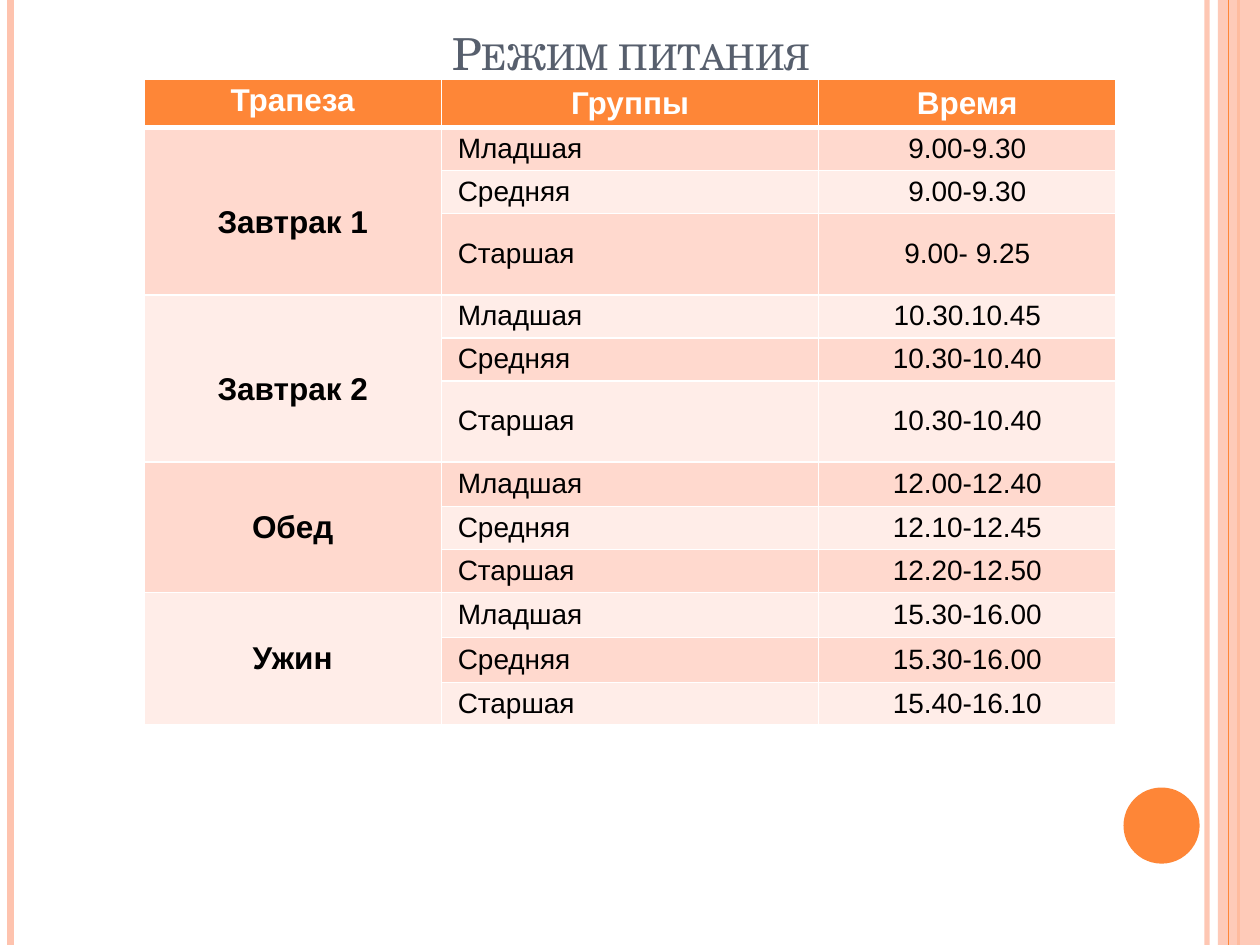
from dataclasses import dataclass

from lxml.etree import SubElement
from pptx import Presentation
from pptx.dml.color import RGBColor
from pptx.enum.shapes import MSO_CONNECTOR, MSO_SHAPE
from pptx.enum.text import MSO_ANCHOR, PP_ALIGN
from pptx.oxml import parse_xml
from pptx.oxml.ns import nsdecls, qn
from pptx.util import Pt

ORANGE = "FE8637"
PEACH = "FEC3AE"
BANDS = ("FFD9CE", "FFEDE8")
WHITE = "FFFFFF"
BLACK = "000000"
SLIDE_HEIGHT = 540
GROUPS = ("Младшая", "Средняя", "Старшая")
HEADERS = ("Трапеза", "Группы", "Время")
COLUMN_WIDTHS = (170, 215.5, 170)
HEADER_HEIGHT = 28


@dataclass(frozen=True)
class Stripe:
    x: float
    color: str
    width: float
    opacity: int = 100


@dataclass(frozen=True)
class Meal:
    name: str
    times: tuple[str, str, str]
    heights: tuple[float, float, float]
    top_margin: float = 2.5


BACK_STRIPES = (
    Stripe(689.75, PEACH, 3, 93),
    Stripe(6, PEACH, 4.5),
    Stripe(707.75, ORANGE, 1.5),
)
FRONT_STRIPE = Stripe(702, ORANGE, 0.75)
MEALS = (
    Meal("Завтрак 1", ("9.00-9.30", "9.00-9.30", "9.00- 9.25"), (24.6, 24.6, 46.3), 15),
    Meal("Завтрак 2", ("10.30.10.45", "10.30-10.40", "10.30-10.40"), (24.6, 24.6, 46.3), 15),
    Meal("Обед", ("12.00-12.40", "12.10-12.45", "12.20-12.50"), (25.7, 24.6, 24.6)),
    Meal("Ужин", ("15.30-16.00", "15.30-16.00", "15.40-16.10"), (25.7, 25.7, 23.4)),
)


def paint(target, color: str, opacity: int = 100) -> None:
    target.solid()
    target.fore_color.rgb = RGBColor.from_string(color)
    if opacity < 100:
        color_element = target._xPr.find(qn("a:solidFill"))[0]
        SubElement(color_element, qn("a:alpha"), val=str(opacity * 1000))


def draw_stripe(slide, stripe: Stripe) -> None:
    connector = slide.shapes.add_connector(
        MSO_CONNECTOR.STRAIGHT, Pt(stripe.x), Pt(0), Pt(stripe.x), Pt(SLIDE_HEIGHT)
    )
    connector.line.width = Pt(stripe.width)
    paint(connector.line.fill, stripe.color, stripe.opacity)
    SubElement(connector._element.spPr, qn("a:effectLst"))


def draw_shape(slide, kind, left: float, top: float, width: float, height: float,
               color: str, opacity: int = 100) -> None:
    shape = slide.shapes.add_shape(kind, Pt(left), Pt(top), Pt(width), Pt(height))
    shape.shadow.inherit = False
    paint(shape.fill, color, opacity)
    shape.line.fill.background()


def style_paragraph(paragraph, font_name: str, size: float, color: str,
                    bold: bool, centered: bool) -> None:
    paragraph.alignment = PP_ALIGN.CENTER if centered else PP_ALIGN.LEFT
    paragraph.font.name = font_name
    paragraph.font.size = Pt(size)
    paragraph.font.bold = bold
    paint(paragraph.font.fill, color)


def draw_title(slide, text: str) -> None:
    box = slide.shapes.add_textbox(Pt(36.75), Pt(15), Pt(648), Pt(34))
    frame = box.text_frame
    frame.word_wrap = True
    frame.vertical_anchor = MSO_ANCHOR.BOTTOM
    paragraph = frame.paragraphs[0]
    paragraph.text = text
    style_paragraph(paragraph, "TeX Gyre Schola", 25.2, "575F6D", False, True)
    paragraph.font._element.set("cap", "small")


def fill_cell(cell, color: str, bottom_border: float = 1) -> None:
    paint(cell.fill, color)
    widths = {"lnL": 1, "lnR": 1, "lnT": 1, "lnB": bottom_border}
    for index, (side, width) in enumerate(widths.items()):
        border = parse_xml(
            f'<a:{side} {nsdecls("a")} w="{Pt(width)}"><a:solidFill>'
            f'<a:srgbClr val="{WHITE}"/></a:solidFill></a:{side}>'
        )
        cell._tc.get_or_add_tcPr().insert(index, border)


def write_cell(cell, text: str, size: float, color: str, bold: bool = False,
               centered: bool = True, top_margin: float = 2.5) -> None:
    cell.vertical_anchor = MSO_ANCHOR.MIDDLE
    cell.margin_left = cell.margin_right = Pt(9.4)
    cell.margin_top = Pt(top_margin)
    cell.margin_bottom = Pt(2.5)
    paragraph = cell.text_frame.paragraphs[0]
    paragraph.text = text
    style_paragraph(paragraph, "Arial", size, color, bold, centered)


def draw_schedule(slide) -> None:
    heights = [HEADER_HEIGHT] + [height for meal in MEALS for height in meal.heights]
    table = slide.shapes.add_table(
        len(heights), len(HEADERS), Pt(82.25), Pt(45),
        Pt(sum(COLUMN_WIDTHS)), Pt(sum(heights))
    ).table
    for column, width in zip(table.columns, COLUMN_WIDTHS):
        column.width = Pt(width)
    for row, height in zip(table.rows, heights):
        row.height = Pt(height)

    for column, header in enumerate(HEADERS):
        cell = table.cell(0, column)
        fill_cell(cell, ORANGE, bottom_border=3)
        write_cell(cell, header, 18, WHITE, bold=True)
    table.cell(0, 0).vertical_anchor = MSO_ANCHOR.TOP

    for meal_index, meal in enumerate(MEALS):
        first_row = 1 + meal_index * len(GROUPS)
        for offset, (group, time) in enumerate(zip(GROUPS, meal.times)):
            row = first_row + offset
            fill_cell(table.cell(row, 0), BANDS[meal_index % 2])
            for column, text in ((1, group), (2, time)):
                cell = table.cell(row, column)
                fill_cell(cell, BANDS[(row - 1) % 2])
                write_cell(cell, text, 16, BLACK, centered=column == 2)
        meal_cell = table.cell(first_row, 0)
        meal_cell.merge(table.cell(first_row + len(GROUPS) - 1, 0))
        write_cell(meal_cell, meal.name, 18, BLACK, bold=True, top_margin=meal.top_margin)


def main() -> None:
    presentation = Presentation()
    presentation.slide_width = Pt(720)
    presentation.slide_height = Pt(SLIDE_HEIGHT)
    slide = presentation.slides.add_slide(presentation.slide_layouts[6])
    for stripe in BACK_STRIPES:
        draw_stripe(slide, stripe)
    draw_shape(slide, MSO_SHAPE.RECTANGLE, 696, 0, 24, SLIDE_HEIGHT, PEACH, 87)
    draw_stripe(slide, FRONT_STRIPE)
    draw_shape(slide, MSO_SHAPE.OVAL, 642, 450, 43.5, 43.5, ORANGE)
    draw_title(slide, "Режим питания")
    draw_schedule(slide)
    presentation.save("out.pptx")


if __name__ == "__main__":
    main()
